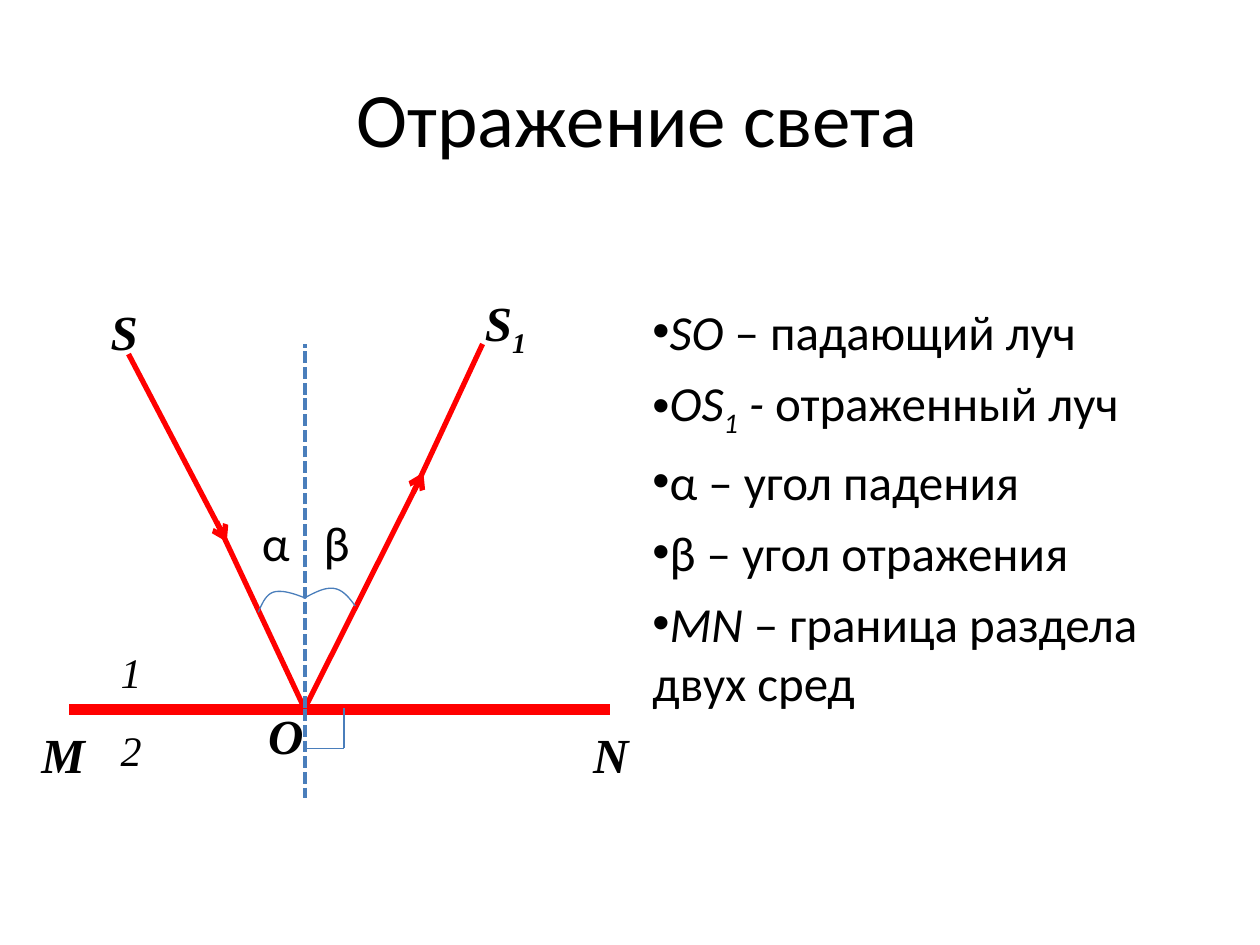
import pptx
import pptx.dml.color
import pptx.enum.dml
import pptx.enum.shapes
import pptx.enum.text
import pptx.oxml
import pptx.oxml.ns
import pptx.util
from pptx.util import Inches

BLACK = pptx.dml.color.RGBColor(0x00, 0x00, 0x00)
RED = pptx.dml.color.RGBColor(0xFF, 0x00, 0x00)
BLUE = pptx.dml.color.RGBColor(0x4A, 0x7E, 0xBB)
DASH = pptx.enum.dml.MSO_LINE.SQUARE_DOT
NAMESPACE = pptx.oxml.ns.nsdecls("a")

presentation = pptx.Presentation()
presentation.slide_width = Inches(10)
presentation.slide_height = Inches(7.5)
slide = presentation.slides.add_slide(presentation.slide_layouts[6])


def add_text(left, top, width, height, size, font_name, paragraphs, bold=False, bullet=None):
    shape = slide.shapes.add_textbox(Inches(left), Inches(top), Inches(width), Inches(height))
    text_frame = shape.text_frame
    text_frame.word_wrap = True
    for index, pieces in enumerate(paragraphs):
        paragraph = text_frame.add_paragraph() if index else text_frame.paragraphs[0]
        if index:
            paragraph.space_before = pptx.util.Pt(7)
        if bullet:
            properties = paragraph._p.get_or_add_pPr()
            properties.append(pptx.oxml.parse_xml(f'<a:buFont {NAMESPACE} typeface="Arial"/>'))
            properties.append(pptx.oxml.parse_xml(f'<a:buChar {NAMESPACE} char="{bullet}"/>'))
        for text, style in pieces:
            run = paragraph.add_run()
            run.text = text
            run.font.name = font_name
            run.font.size = pptx.util.Pt(size)
            run.font.color.rgb = BLACK
            run.font.bold = bold
            run.font.italic = "italic" in style
            if "subscript" in style:
                run._r.get_or_add_rPr().set("baseline", "-25000")
    return text_frame


def add_line(start, end, color, width, dash=None, arrow=False):
    line = slide.shapes.add_connector(
        pptx.enum.shapes.MSO_CONNECTOR.STRAIGHT, *(Inches(value) for value in start + end)
    )
    line.line.color.rgb = color
    line.line.width = pptx.util.Pt(width)
    if dash:
        line.line.dash_style = dash
    if arrow:
        line.line._get_or_add_ln().append(
            pptx.oxml.parse_xml(f'<a:tailEnd {NAMESPACE} type="arrow"/>')
        )
    line._element.spPr.append(pptx.oxml.parse_xml(f"<a:effectLst {NAMESPACE}/>"))


title_frame = add_text(0.56, 0.3, 9, 1.25, 44, "Calibri", [[("Отражение света", "")]])
title_frame.vertical_anchor = pptx.enum.text.MSO_ANCHOR.MIDDLE
title_frame.paragraphs[0].alignment = pptx.enum.text.PP_ALIGN.CENTER

for angle_name, left in (("α", 1.98), ("β", 2.47)):
    add_text(left, 4.02, 0.5, 0.57, 28, "Calibri", [[(angle_name, "")]])

definitions = [
    [("SO", "italic"), (" – падающий луч", "")],
    [("OS", "italic"), ("1", "italic subscript"), (" - ", "italic"), ("отраженный луч", "")],
    [("α – угол падения", "")],
    [("β – угол отражения", "")],
    [("МN", "italic"), (" – граница раздела двух сред", "")],
]
add_text(5.08, 2.34, 4.42, 4.36, 28, "Calibri", definitions, bullet="•")

add_line((0.55, 5.63), (4.84, 5.63), RED, 6)
add_line((1.02, 2.81), (1.8, 4.3), RED, 3, arrow=True)
add_line((1.72, 4.14), (2.42, 5.63), RED, 3)
add_line((2.42, 5.62), (3.36, 3.75), RED, 3, arrow=True)
add_line((3.28, 3.91), (3.83, 2.73), RED, 3)
add_line((2.42, 5.62), (2.42, 2.73), BLUE, 2.25, DASH)

angle_arcs = [
    [
        [(2.05, 4.86), (2.08, 4.79), (2.11, 4.72), (2.17, 4.7)],
        [(2.17, 4.7), (2.24, 4.68), (2.33, 4.71), (2.43, 4.75)],
    ],
    [
        [(2.41, 4.75), (2.5, 4.7), (2.58, 4.66), (2.65, 4.67)],
        [(2.65, 4.67), (2.72, 4.68), (2.77, 4.74), (2.82, 4.81)],
    ],
]
STEPS = 12
for arc in angle_arcs:
    points = []
    for curve in arc:
        for step in range(1, STEPS + 1):
            t = step / STEPS
            weights = ((1 - t) ** 3, 3 * t * (1 - t) ** 2, 3 * t**2 * (1 - t), t**3)
            points.append(
                tuple(
                    Inches(sum(weight * point[axis] for weight, point in zip(weights, curve)))
                    for axis in (0, 1)
                )
            )
    start_x, start_y = arc[0][0]
    builder = slide.shapes.build_freeform(Inches(start_x), Inches(start_y))
    builder.add_line_segments(points, close=False)
    angle_arc = builder.convert_to_shape()
    angle_arc.shadow.inherit = False
    angle_arc.fill.background()
    angle_arc.line.color.rgb = BLUE
    angle_arc.line.width = pptx.util.Pt(0.75)

add_line((2.42, 5.63), (2.42, 6.33), BLUE, 2.25, DASH)

point_labels = [
    (0.78, 2.34, 0.79, 0.57, [("S", "italic")]),
    (3.75, 2.27, 0.7, 0.66, [("S", "italic"), ("1", "italic subscript")]),
    (2.03, 5.55, 0.55, 0.54, [("O", "italic")]),
    (0.23, 5.7, 0.75, 0.57, [("M", "italic")]),
    (4.61, 5.7, 0.54, 0.54, [("N", "italic")]),
]
for left, top, width, height, pieces in point_labels:
    add_text(left, top, width, height, 28, "Times New Roman", [pieces], bold=True)

for medium, top in (("1", 5.08), ("2", 5.7)):
    add_text(0.86, top, 0.5, 0.5, 24, "Times New Roman", [[(medium, "italic")]])

add_line((2.42, 5.94), (2.73, 5.94), BLUE, 0.75)
add_line((2.73, 5.94), (2.73, 5.62), BLUE, 0.75)

presentation.save("out.pptx")
